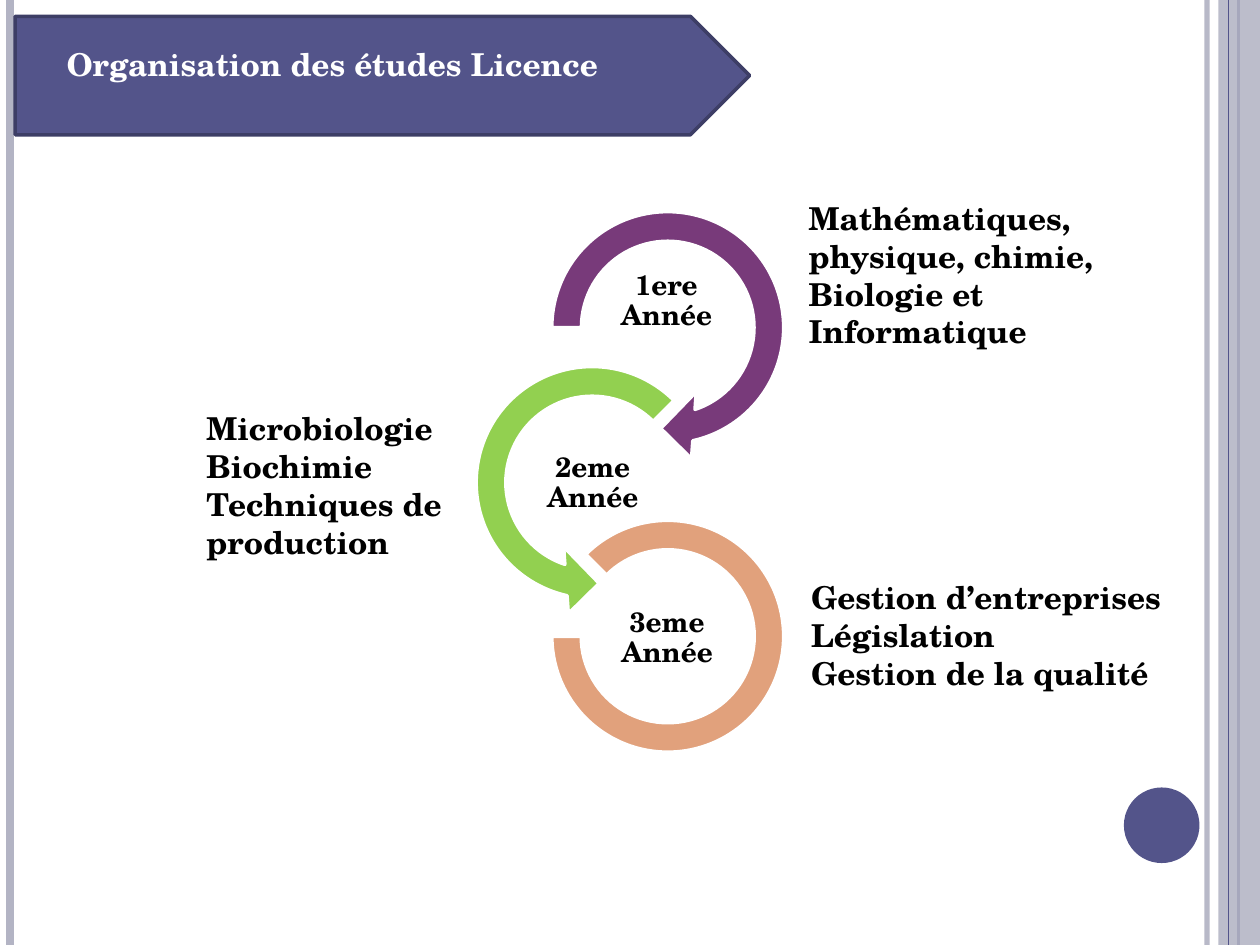
from dataclasses import dataclass

from lxml.etree import SubElement
from pptx import Presentation
from pptx.dml.color import RGBColor
from pptx.enum.shapes import MSO_CONNECTOR, MSO_SHAPE
from pptx.enum.text import MSO_ANCHOR, MSO_AUTO_SIZE, PP_ALIGN
from pptx.oxml.ns import qn
from pptx.shapes.autoshape import Shape
from pptx.slide import Slide
from pptx.util import Inches, Pt

FONT = "TeX Gyre Schola"
WHITE = RGBColor(0xFF, 0xFF, 0xFF)
BLACK = RGBColor(0x00, 0x00, 0x00)
INDIGO = RGBColor(0x53, 0x54, 0x8A)
DARK_INDIGO = RGBColor(0x3D, 0x3E, 0x66)
GREY = RGBColor(0xB3, 0xB4, 0xC4)
PURPLE = RGBColor(0x78, 0x3A, 0x7A)
GREEN = RGBColor(0x92, 0xD0, 0x50)
ORANGE = RGBColor(0xE1, 0xA1, 0x7C)

SLIDE_HEIGHT = 7.5

Box = tuple[float, float, float, float]


@dataclass(frozen=True)
class Rule:
    x: float
    color: RGBColor
    width: float
    opacity: int = 100


@dataclass(frozen=True)
class Year:
    label: str
    label_box: Box
    arc: MSO_SHAPE
    arc_box: Box
    adjustments: tuple[float, ...]
    color: RGBColor
    subjects: tuple[str, ...]
    subjects_box: Box


BACK_RULES = (Rule(9.58, GREY, 3, 93), Rule(0.08, GREY, 4.5), Rule(9.83, INDIGO, 1.5))
FRONT_RULE = Rule(9.75, INDIGO, 0.75)

YEARS = (
    Year("1ere Année", (4.64, 2.1, 1.3, 0.59),
         MSO_SHAPE.CIRCULAR_ARROW, (4.23, 1.53, 2.14, 2.14),
         (0.11, 11.42, 45, 108, 0.125), PURPLE,
         ("Mathématiques, physique, chimie, Biologie et Informatique",),
         (6.32, 1.53, 2.76, 1.31)),
    Year("2eme Année", (4.11, 3.54, 1.19, 0.59),
         MSO_SHAPE.LEFT_CIRCULAR_ARROW, (3.63, 2.76, 2.14, 2.14),
         (0.11, 11.42, 63, 189, 0.125), GREEN,
         ("Microbiologie", "Biochimie Techniques de production"),
         (1.54, 3.2, 2.28, 1.31)),
    Year("3eme Année", (4.7, 4.77, 1.19, 0.59),
         MSO_SHAPE.BLOCK_ARC, (4.38, 4.13, 1.84, 1.84),
         (135, 108, 0.127), ORANGE,
         ("Gestion d’entreprises", "Législation", "Gestion de la qualité"),
         (6.34, 4.54, 3.07, 1.01)),
)


def set_opacity(properties, percent: int) -> None:
    color = next(properties.iter(qn("a:srgbClr")))
    SubElement(color, qn("a:alpha"), val=str(percent * 1000))


def add_rule(slide: Slide, rule: Rule) -> None:
    x = Inches(rule.x)
    connector = slide.shapes.add_connector(
        MSO_CONNECTOR.STRAIGHT, x, Inches(0), x, Inches(SLIDE_HEIGHT))
    connector.line.color.rgb = rule.color
    connector.line.width = Pt(rule.width)
    properties = connector._element.spPr
    if rule.opacity < 100:
        set_opacity(properties, rule.opacity)
    SubElement(properties, qn("a:effectLst"))


def add_filled_shape(slide: Slide, kind: MSO_SHAPE, box: Box, color: RGBColor,
                     outline: RGBColor | None = None) -> Shape:
    shape = slide.shapes.add_shape(kind, *map(Inches, box))
    shape.shadow.inherit = False
    shape.fill.solid()
    shape.fill.fore_color.rgb = color
    if outline is None:
        shape.line.fill.background()
    else:
        shape.line.color.rgb = outline
        shape.line.width = Pt(2)
    return shape


def add_text(slide: Slide, lines: tuple[str, ...], box: Box, size: int = 18,
             color: RGBColor = BLACK) -> Shape:
    shape = slide.shapes.add_textbox(*map(Inches, box))
    frame = shape.text_frame
    frame.word_wrap = True
    frame.auto_size = MSO_AUTO_SIZE.SHAPE_TO_FIT_TEXT
    for index, line in enumerate(lines):
        paragraph = frame.add_paragraph() if index else frame.paragraphs[0]
        run = paragraph.add_run()
        run.text = line
        run.font.name = FONT
        run.font.size = Pt(size)
        run.font.bold = True
        run.font.color.rgb = color
    return shape


def add_year_label(slide: Slide, year: Year) -> None:
    frame = add_text(slide, (year.label,), year.label_box, size=16).text_frame
    frame.auto_size = MSO_AUTO_SIZE.NONE
    frame.vertical_anchor = MSO_ANCHOR.MIDDLE
    frame.margin_left = frame.margin_right = Inches(0.01)
    frame.margin_top = frame.margin_bottom = Inches(0.01)
    paragraph = frame.paragraphs[0]
    paragraph.alignment = PP_ALIGN.CENTER
    paragraph.line_spacing = 0.9


def add_year(slide: Slide, year: Year) -> None:
    arc = add_filled_shape(slide, year.arc, year.arc_box, year.color, WHITE)
    for index, value in enumerate(year.adjustments):
        arc.adjustments[index] = value
    add_year_label(slide, year)
    add_text(slide, year.subjects, year.subjects_box)


def main() -> None:
    presentation = Presentation()
    presentation.slide_width = Inches(10)
    presentation.slide_height = Inches(SLIDE_HEIGHT)
    slide = presentation.slides.add_slide(presentation.slide_layouts[6])

    # Side decoration
    for rule in BACK_RULES:
        add_rule(slide, rule)
    band = add_filled_shape(slide, MSO_SHAPE.RECTANGLE, (9.67, 0, 0.33, SLIDE_HEIGHT), GREY)
    set_opacity(band._element.spPr, 87)
    add_rule(slide, FRONT_RULE)
    add_filled_shape(slide, MSO_SHAPE.OVAL, (8.92, 6.25, 0.6, 0.6), INDIGO)

    # Title banner
    add_filled_shape(slide, MSO_SHAPE.PENTAGON, (0.12, 0.13, 5.83, 0.94), INDIGO, DARK_INDIGO)
    add_text(slide, ("Organisation des études Licence",), (0.43, 0.31, 5.04, 0.4), color=WHITE)

    # Chain of years with their subjects
    for year in YEARS:
        add_year(slide, year)

    presentation.save("out.pptx")


if __name__ == "__main__":
    main()
